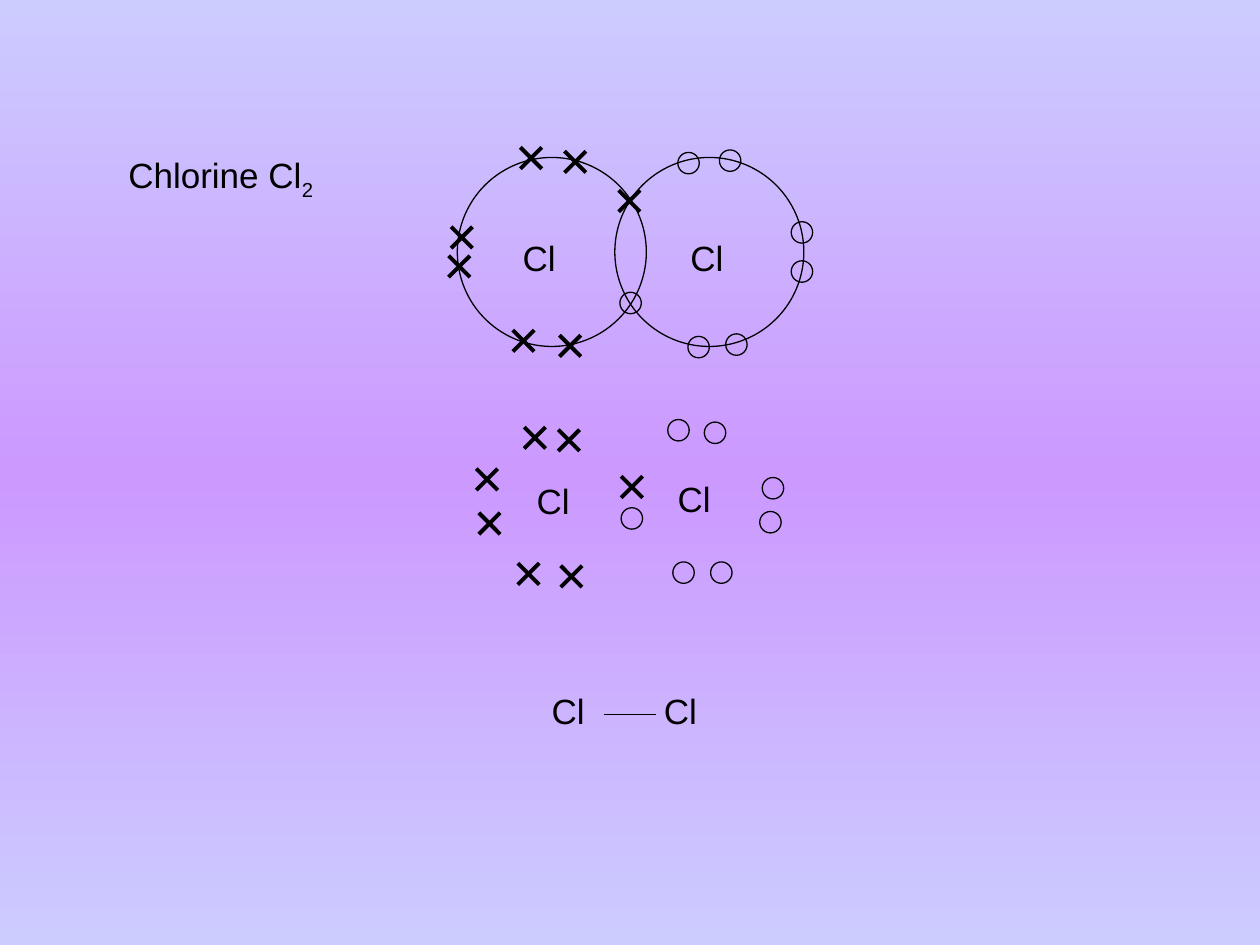
import copy

import pptx
import pptx.dml.color
import pptx.enum.shapes
import pptx.enum.text
import pptx.oxml.ns
import pptx.oxml.xmlchemy
import pptx.util
from pptx.util import Inches

BLACK = pptx.dml.color.RGBColor(0x00, 0x00, 0x00)
LILAC = pptx.dml.color.RGBColor(0xCC, 0xCC, 0xFF)
VIOLET = pptx.dml.color.RGBColor(0xCC, 0x99, 0xFF)
FONT = "Arial"
SIZE = 0.17
HIGH = 0.43


def paint(slide):
    fill = slide.background.fill
    fill.gradient()
    fill.gradient_angle = 270
    stops = slide.element.find(".//" + pptx.oxml.ns.qn("a:gsLst"))
    stops.append(copy.deepcopy(stops[0]))
    marks = ((0, LILAC), (0.5, VIOLET), (1, LILAC))
    for stop, (place, color) in zip(fill.gradient_stops, marks):
        stop.position = place
        stop.color.rgb = color


def label(shapes, left, top, width, text="Cl", sub=""):
    box = shapes.add_textbox(Inches(left), Inches(top), Inches(width), Inches(HIGH))
    frame = box.text_frame
    frame.word_wrap = True
    frame.auto_size = pptx.enum.text.MSO_AUTO_SIZE.SHAPE_TO_FIT_TEXT
    para = frame.paragraphs[0]
    para.text = text
    if sub:
        run = para.add_run()
        run.text = sub
        run.font._element.set("baseline", "-25000")
    for run in para.runs:
        run.font.name = FONT
        run.font.size = pptx.util.Pt(20)
        run.font.color.rgb = BLACK


def ring(shapes, left, top, size):
    oval = shapes.add_shape(
        pptx.enum.shapes.MSO_SHAPE.OVAL,
        Inches(left), Inches(top), Inches(size), Inches(size))
    oval.shadow.inherit = False
    oval.fill.background()
    oval.line.color.rgb = BLACK
    oval.line.width = pptx.util.Pt(0.75)


def stroke(shapes, start, end, weight):
    line = shapes.add_connector(
        pptx.enum.shapes.MSO_CONNECTOR.STRAIGHT,
        *(Inches(value) for value in start + end))
    line.line.color.rgb = BLACK
    line.line.width = pptx.util.Pt(weight)
    line._element.spPr.append(pptx.oxml.xmlchemy.OxmlElement("a:effectLst"))


def cross(shapes, left, top):
    right, base = left + SIZE, top + SIZE
    stroke(shapes, (left, base), (right, top), 2.25)
    stroke(shapes, (left, top), (right, base), 2.25)


def pairs(shapes, left, top, rounds, crosses, names):
    for x, y in rounds:
        ring(shapes, left + x, top + y, SIZE)
    for x, y in crosses:
        cross(shapes, left + x, top + y)
    for x, y in names:
        label(shapes, left + x, top + y, 0.58)


def shells(slide, left, top):
    shapes = slide.shapes.add_group_shape().shapes
    for x in (0.07, 1.32):
        ring(shapes, left + x, top + 0.08, 1.5)
    rounds = ((1.82, 0.04), (2.15, 0.02), (2.72, 0.59), (2.72, 0.9),
              (1.9, 1.5), (2.2, 1.48), (1.36, 1.15))
    crosses = ((0.02, 0.63), (0.92, 0.03), (0.57, 0), (0, 0.86),
               (1.35, 0.34), (0.88, 1.49), (0.51, 1.45))
    pairs(shapes, left, top, rounds, crosses, ((0.49, 0.66), (1.82, 0.66)))


def dots(slide, left, top):
    shapes = slide.shapes.add_group_shape().shapes
    rounds = ((1.15, 0.7), (1.52, 0), (1.81, 0.02), (2.27, 0.46),
              (2.25, 0.73), (1.56, 1.13), (1.86, 1.13))
    crosses = ((1.15, 0.45), (0.38, 0.06), (0.65, 0.08), (0, 0.39),
               (0.02, 0.74), (0.33, 1.14), (0.67, 1.16))
    pairs(shapes, left, top, rounds, crosses, ((0.38, 0.43), (1.5, 0.41)))


def bond(slide, left, top):
    label(slide.shapes, left, top, 0.56)
    label(slide.shapes, left + 0.89, top, 0.47)
    level = top + 0.25
    stroke(slide.shapes, (left + 0.51, level), (left + 0.93, level), 0.75)


def title(slide, left, top):
    label(slide.shapes, left, top, 3.17, "Chlorine Cl", "2")


def main():
    deck = pptx.Presentation()
    deck.slide_width = Inches(10)
    deck.slide_height = Inches(7.5)
    slide = deck.slides.add_slide(deck.slide_layouts[6])
    paint(slide)
    dots(slide, 3.78, 3.33)
    title(slide, 0.92, 1.17)
    shells(slide, 3.56, 1.17)
    bond(slide, 4.28, 5.42)
    deck.save("out.pptx")


if __name__ == "__main__":
    main()
